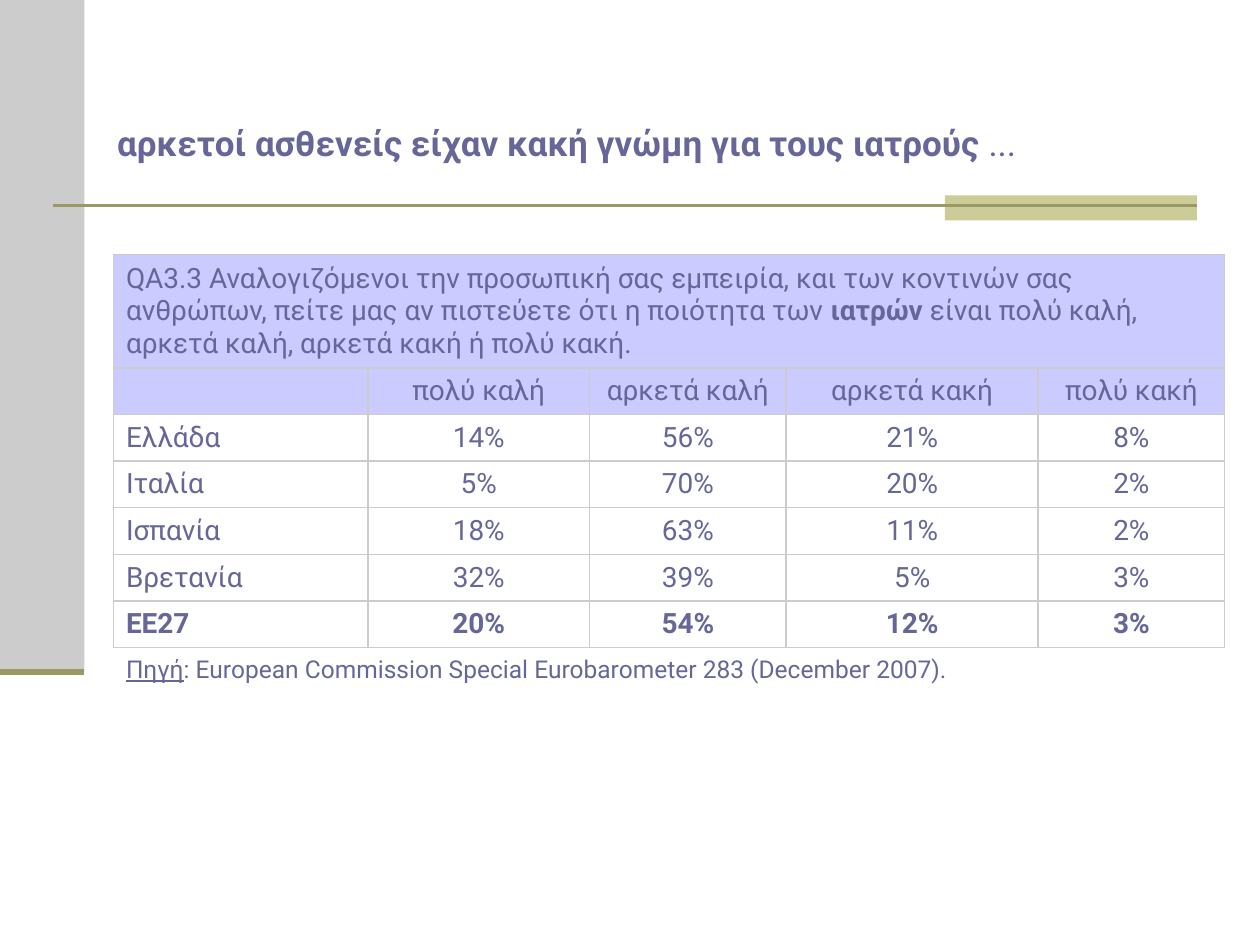
import dataclasses

import lxml.etree
import pptx
import pptx.dml.color
import pptx.enum.shapes
import pptx.enum.text
import pptx.oxml.ns
import pptx.util


@dataclasses.dataclass(frozen=True)
class Theme:
    font: str = "Roboto"
    ink: str = "666699"
    grey: str = "CCCCCC"
    sand: str = "CCCC99"
    olive: str = "999966"
    lilac: str = "9999FF"
    title_size: int = 20
    table_size: int = 16
    source_size: int = 14


THEME = Theme()
RGB = pptx.dml.color.RGBColor.from_string
QN = pptx.oxml.ns.qn
ALIGN = pptx.enum.text.PP_ALIGN
ANCHOR = pptx.enum.text.MSO_ANCHOR


def grid(*steps):
    """Turn steps of a 100 by 75 grid into slide lengths."""
    return [pptx.util.Inches(step / 10) for step in steps]


def write(para, spans, size):
    """Fill a paragraph with (text, bold, underline) spans."""
    para.font.name = THEME.font
    para.font.size = pptx.util.Pt(size)
    para.font.color.rgb = RGB(THEME.ink)
    for text, bold, underline in spans:
        span = para.add_run()
        span.text = text
        span.font.bold = bold
        span.font.underline = underline


deck = pptx.Presentation()
deck.slide_width, deck.slide_height = grid(100, 75)
page = deck.slides.add_slide(deck.slide_layouts[5])

# Side band, accent block and rules
for box, color in [((0, 0, 6.7, 53.3), THEME.grey), ((75, 15.5, 20, 2), THEME.sand)]:
    block = page.shapes.add_shape(pptx.enum.shapes.MSO_SHAPE.RECTANGLE, *grid(*box))
    block.shadow.inherit = False
    block.fill.solid()
    block.fill.fore_color.rgb = RGB(color)
    block.line.fill.background()

for start, end, height, width in [(4.2, 95, 16.3, 1.5), (0, 6.7, 53.3, 3.5)]:
    rule = page.shapes.add_connector(
        pptx.enum.shapes.MSO_CONNECTOR.STRAIGHT, *grid(start, height, end, height))
    rule.line.color.rgb = RGB(THEME.olive)
    rule.line.width = pptx.util.Pt(width)
    lxml.etree.SubElement(rule._element.spPr, QN("a:effectLst"))

# Title, lifted by one line above the rule
title = page.shapes.title
title.left, title.top, title.width, title.height = grid(8.3, 1.3, 86.6, 15.5)
title.text_frame.word_wrap = True
title.text_frame.auto_size = pptx.enum.text.MSO_AUTO_SIZE.NONE
title.text_frame.vertical_anchor = ANCHOR.BOTTOM
title.text_frame.margin_bottom, = grid(3.8)
heading = title.text_frame.paragraphs[0]
heading.alignment = ALIGN.LEFT
write(heading, [("αρκετοί ασθενείς είχαν κακή γνώμη για τους ιατρούς", True, False),
                (" ...", False, False)], THEME.title_size)

# Survey table: question, answers, countries, source
QUESTION = [
    ("QA3.3 Αναλογιζόμενοι την προσωπική σας εμπειρία, και των κοντινών σας ανθρώπων, "
     "πείτε μας αν πιστεύετε ότι η ποιότητα των ", False, False),
    ("ιατρών", True, False),
    (" είναι πολύ καλή, αρκετά καλή, αρκετά κακή ή πολύ κακή.", False, False),
]
SOURCE = [
    ("Πηγή", False, True),
    (": European Commission Special Eurobarometer 283 (December 2007).", False, False),
]
ANSWERS = [
    ("", "πολύ καλή", "αρκετά καλή", "αρκετά κακή", "πολύ κακή"),
    ("Ελλάδα", "14%", "56%", "21%", "8%"),
    ("Ιταλία", "5%", "70%", "20%", "2%"),
    ("Ισπανία", "18%", "63%", "11%", "2%"),
    ("Βρετανία", "32%", "39%", "5%", "3%"),
    ("ΕΕ27", "20%", "54%", "12%", "3%"),
]
COLUMNS = grid(20.2, 17.6, 15.6, 20, 14.8)
ROWS = grid(9, *[3.7] * len(ANSWERS), 3.6)
LAST = len(ROWS) - 1

table = page.shapes.add_table(
    len(ROWS), len(COLUMNS), *grid(9, 20.2), sum(COLUMNS), sum(ROWS)).table
table.first_row = table.horz_banding = False
for column, width in zip(table.columns, COLUMNS):
    column.width = width
for row, height in zip(table.rows, ROWS):
    row.height = height
for r in (0, LAST):
    table.cell(r, 0).merge(table.cell(r, len(COLUMNS) - 1))

for r in range(len(ROWS)):
    for c in range(len(COLUMNS)):
        cell = table.cell(r, c)
        cell.vertical_anchor = ANCHOR.MIDDLE
        para = cell.text_frame.paragraphs[0]
        size = THEME.source_size if r == LAST else THEME.table_size
        if r in (0, LAST):
            spans = (QUESTION if r == 0 else SOURCE) if c == 0 else []
        else:
            text = ANSWERS[r - 1][c]
            spans = [(text, r == LAST - 1, False)] if text else []
            para.alignment = ALIGN.CENTER if c else ALIGN.LEFT
        write(para, spans, size)

        properties = cell._tc.get_or_add_tcPr()
        for side in "LRTB":
            edge = lxml.etree.SubElement(properties, QN(f"a:ln{side}"), w="12700")
            if r == LAST and side != "T":
                lxml.etree.SubElement(edge, QN("a:noFill"))
            else:
                paint = lxml.etree.SubElement(edge, QN("a:solidFill"))
                lxml.etree.SubElement(paint, QN("a:srgbClr"), val=THEME.grey)
        if r < 2:
            cell.fill.solid()
            cell.fill.fore_color.rgb = RGB(THEME.lilac)
            tint = properties.find(QN("a:solidFill")).find(QN("a:srgbClr"))
            lxml.etree.SubElement(tint, QN("a:alpha"), val="50000")
        else:
            cell.fill.background()

deck.save("out.pptx")
